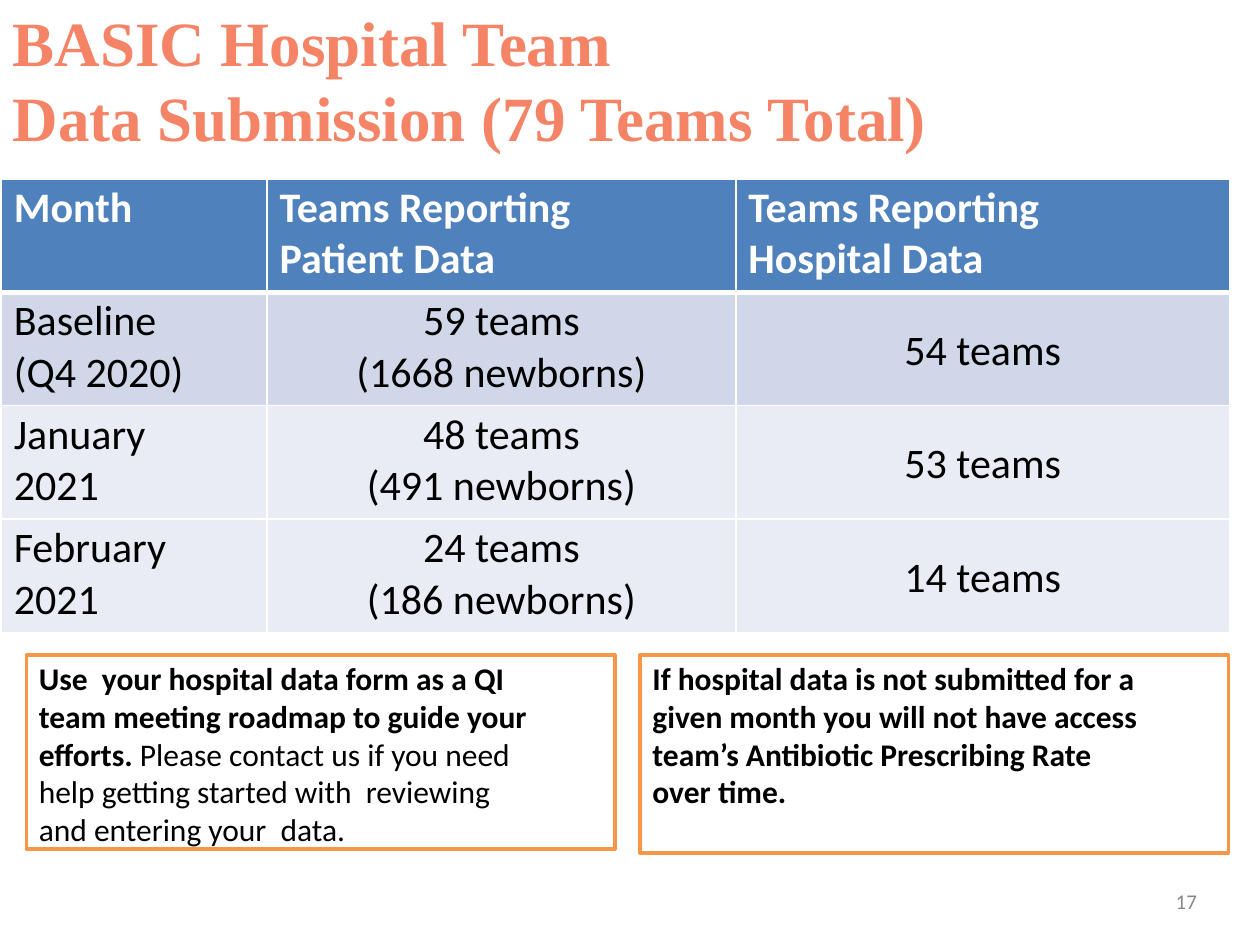
from lxml.etree import SubElement
from pptx import Presentation
from pptx.dml.color import RGBColor as RGB
from pptx.enum.shapes import MSO_SHAPE as Shape
from pptx.enum.text import MSO_ANCHOR as Anchor, PP_ALIGN as Align
from pptx.oxml.ns import qn
from pptx.util import Inches, Pt

CORAL = RGB(0xF5, 0x84, 0x66)
ORANGE = RGB(0xF7, 0x96, 0x46)
BLUE = RGB(0x4F, 0x81, 0xBC)
MIST = RGB(0xD0, 0xD7, 0xE8)
PALE = RGB(0xE9, 0xEC, 0xF4)
GRAY = RGB(0x89, 0x89, 0x89)
WHITE = RGB(255, 255, 255)
BLACK = RGB(0, 0, 0)


def style(para, size, color, bold=None, name="Calibri", align=Align.LEFT):
    para.alignment = align
    font = para.font
    font.size, font.name, font.bold = Pt(size), name, bold
    font.color.rgb = color


def edge(cell, side, width):
    line = SubElement(cell._tc.get_or_add_tcPr(), qn("a:ln" + side), w=str(Pt(width)))
    fill = SubElement(line, qn("a:solidFill"))
    SubElement(fill, qn("a:srgbClr"), val=str(WHITE))


deck = Presentation()
deck.slide_width, deck.slide_height = Inches(10), Inches(7.5)
wide, high = deck.slide_width, deck.slide_height
slide = deck.slides.add_slide(deck.slide_layouts[5])

title = slide.shapes.title
title.left, title.top = 0, 0
title.width, title.height = int(wide * 0.9), high // 6
title.text_frame.text = "BASIC Hospital Team\nData Submission (79 Teams Total)"
title.text_frame.vertical_anchor = Anchor.MIDDLE
for para in title.text_frame.paragraphs:
    style(para, 36, CORAL, True, "Times New Roman")

rows = [
    ("Month", "Teams Reporting\vPatient Data", "Teams Reporting\vHospital Data"),
    ("Baseline\v(Q4 2020)", "59 teams\n(1668 newborns)", "54 teams"),
    ("January\v2021", "48 teams\n(491 newborns)", "53 teams"),
    ("February\v2021", "24 teams\n(186 newborns)", "14 teams"),
]
fills = [BLUE, MIST, PALE, PALE]
tall = Inches(0.9)
grid = slide.shapes.add_table(
    4, 3, Inches(0.01), Inches(1.42), Inches(9.75), tall * 4).table
for col, size in zip(grid.columns, (2.11, 3.72, 3.92)):
    col.width = Inches(size)
for r, row in enumerate(rows):
    grid.rows[r].height = tall
    for c, text in enumerate(row):
        cell = grid.cell(r, c)
        for side in "LRTB":
            thick = (r, side) in ((0, "B"), (1, "T"))
            edge(cell, side, 3 if thick else 1)
        cell.fill.solid()
        cell.fill.fore_color.rgb = fills[r]
        left = r == 0 or c == 0
        cell.margin_left = Inches(0.1 if left else 0)
        cell.margin_right = cell.margin_bottom = 0
        cell.margin_top = Inches(0.03)
        if r and c == 2:
            cell.vertical_anchor = Anchor.MIDDLE
        cell.text = text
        for para in cell.text_frame.paragraphs:
            style(para, 24, BLACK if r else WHITE, r == 0,
                  align=Align.LEFT if left else Align.CENTER)

notes = [
    (0.21, 1.54, "Use  your hospital data form as a QI team meeting roadmap "
     "to guide your efforts. ",
     "Please contact us if you need help getting started with  reviewing "
     "and entering your  data."),
    (5.08, 1.57, "If hospital data is not submitted for a given month you will "
     "not have access team’s Antibiotic Prescribing Rate over time.", ""),
]
for x, h, strong, plain in notes:
    box = slide.shapes.add_shape(
        Shape.RECTANGLE, Inches(x), Inches(5.2), Inches(4.67), Inches(h))
    box.shadow.inherit = False
    box.fill.background()
    box.line.color.rgb = ORANGE
    box.line.width = Pt(2.04)
    frame = box.text_frame
    frame.word_wrap = True
    frame.vertical_anchor = Anchor.TOP
    frame.margin_left, frame.margin_right = Inches(0.1), Inches(0.64)
    frame.margin_top, frame.margin_bottom = Inches(0.03), 0
    para = frame.paragraphs[0]
    style(para, 18, BLACK)
    for text, bold in ((strong, True), (plain, False)):
        if text:
            run = para.add_run()
            run.text = text
            run.font.bold = bold

page = slide.shapes.add_textbox(
    Inches(7.17), Inches(6.95), Inches(2.33), Inches(0.4)).text_frame
page.margin_left = page.margin_right = page.margin_top = page.margin_bottom = 0
page.word_wrap = True
page.vertical_anchor = Anchor.MIDDLE
page.text = "17"
style(page.paragraphs[0], 12, GRAY, align=Align.RIGHT)

deck.save("out.pptx")
